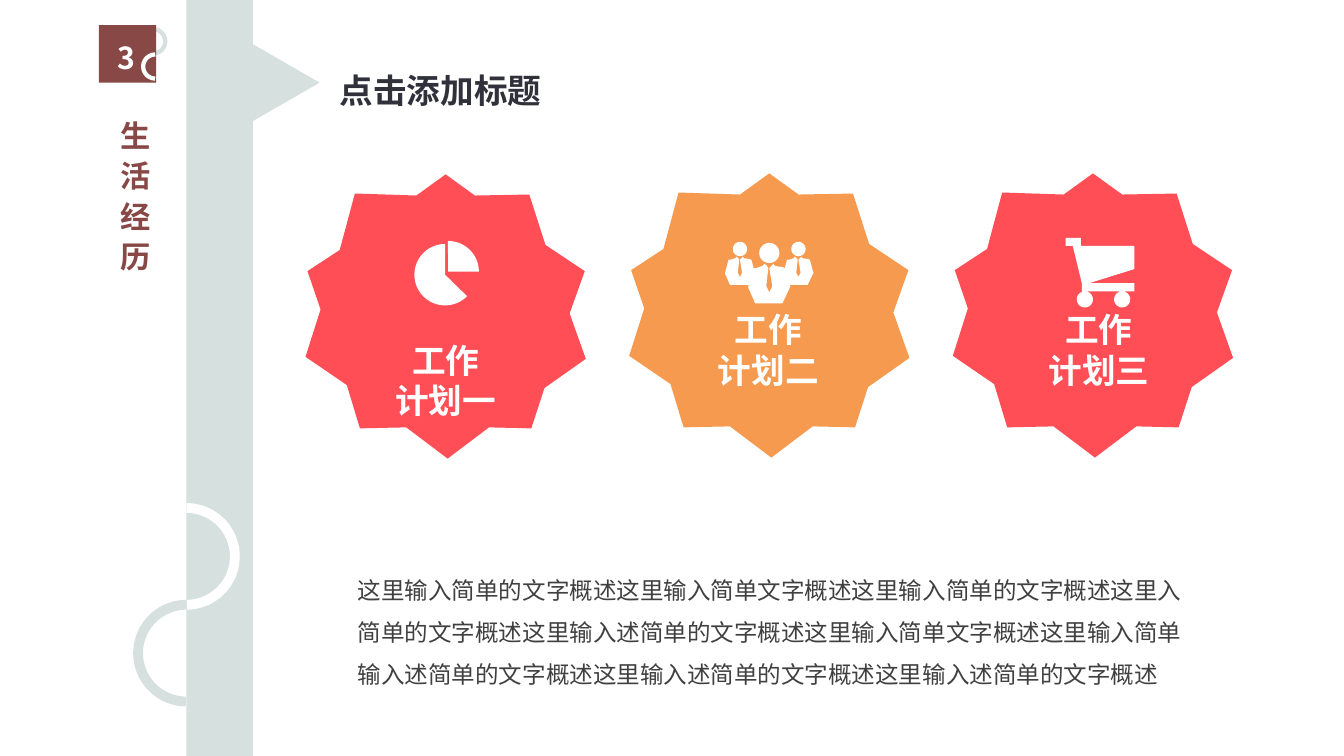
"""Build a slide with three work-plan badges beside a decorated section bar."""
from math import cos, pi, sin

from lxml.etree import SubElement
from pptx import Presentation
from pptx.dml.color import RGBColor
from pptx.enum.shapes import MSO_SHAPE
from pptx.enum.text import MSO_AUTO_SIZE, PP_ALIGN
from pptx.oxml.ns import qn
from pptx.util import Inches, Pt

FONT = "Noto Sans CJK JP"
WHITE = RGBColor(0xFF, 0xFF, 0xFF)
RED = RGBColor(0xFF, 0x4E, 0x56)
ORANGE = RGBColor(0xF6, 0x9A, 0x4F)
MIST = RGBColor(0xD6, 0xE0, 0xDF)
BROWN = RGBColor(0x88, 0x48, 0x46)
INK = RGBColor(0x31, 0x31, 0x3B)
GREY = RGBColor(0x40, 0x40, 0x40)

BADGE_STEP = 3.21
BADGE = [
    (4.42, 1.73), (4.71, 1.94), (5.25, 1.93), (5.41, 2.43), (5.8, 2.69),
    (5.65, 3.11), (5.81, 3.56), (5.4, 3.85), (5.27, 4.25), (4.85, 4.24),
    (4.44, 4.55), (4.03, 4.24), (3.57, 4.25), (3.44, 3.82), (3.03, 3.54),
    (3.18, 3.07), (3.05, 2.69), (3.37, 2.48), (3.52, 1.92), (4.13, 1.94),
]
BADGES = [
    (RED, 0, "计划一", (3.49, 3.32, 1.86, 0.91)),
    (ORANGE, -0.01, "计划二", (6.77, 3.02, 1.7, 0.91)),
    (RED, -0.01, "计划三", (9.97, 3.02, 1.86, 0.91)),
]
PERSON_BODY = [
    (0.16, 0.21), (0.18, 0.22), (0.2, 0.25), (0.18, 0.43), (0.21, 0.49),
    (0.24, 0.43), (0.21, 0.25), (0.24, 0.22), (0.25, 0.21), (0.27, 0.23),
    (0.34, 0.24), (0.37, 0.25), (0.41, 0.4), (0.42, 0.43), (0.34, 0.6),
    (0.07, 0.6), (0, 0.44), (0.05, 0.25), (0.08, 0.25), (0.14, 0.23),
]
CART_BODY = [
    (10.57, 2.36), (10.72, 2.36), (10.72, 2.44), (11.25, 2.44), (11.25, 2.67),
    (10.8, 2.81), (11.25, 2.81), (11.25, 2.89), (10.73, 2.89), (10.73, 2.81),
    (10.64, 2.44), (10.57, 2.44),
]
SUMMARY = (
    "这里输入简单的文字概述这里输入简单文字概述这里输入简单的文字概述这里入"
    "简单的文字概述这里输入述简单的文字概述这里输入简单文字概述这里输入简单"
    "输入述简单的文字概述这里输入述简单的文字概述这里输入述简单的文字概述"
)


def circle(center_x, center_y, radius, steps=36):
    """Return the points of a circular contour."""
    angles = [2 * pi * step / steps for step in range(steps)]
    return [(center_x + radius * cos(angle), center_y + radius * sin(angle)) for angle in angles]


def move(points, left, top, scale=1):
    """Return points scaled and then shifted."""
    return [(left + scale * x, top + scale * y) for x, y in points]


def fill_plain(shape, color):
    """Give a shape a solid fill with no line or shadow."""
    shape.shadow.inherit = False
    shape.fill.solid()
    shape.fill.fore_color.rgb = color
    shape.line.fill.background()


def add_outline(shapes, contours, color):
    """Add one filled freeform made of closed contours."""
    builder = None
    for contour in contours:
        points = [(Inches(x), Inches(y)) for x, y in contour]
        if builder is None:
            builder = shapes.build_freeform(*points[0], scale=1.0)
        else:
            builder.move_to(*points[0])
        builder.add_line_segments(points[1:], close=True)
    fill_plain(builder.convert_to_shape(), color)


def add_solid(shapes, kind, box, color, adjustments=(), rotation=0):
    """Add a filled preset shape."""
    shape = shapes.add_shape(kind, *map(Inches, box))
    for index, value in enumerate(adjustments):
        shape.adjustments[index] = value
    shape.rotation = rotation
    fill_plain(shape, color)


def add_half_ring(shapes, left, top, size, color, width, flipped=False):
    """Add a semicircular arc, open to the left or mirrored."""
    arc = shapes.add_shape(MSO_SHAPE.ARC, Inches(left), Inches(top), Inches(size), Inches(size))
    arc.adjustments[0] = 162
    arc.adjustments[1] = 53.592
    arc.shadow.inherit = False
    arc.fill.background()
    arc.line.color.rgb = color
    arc.line.width = Pt(width)
    if flipped:
        arc._element.spPr.find(qn("a:xfrm")).set("flipH", "1")


def add_text(shapes, box, lines, size, color, bold=True, wrap=True,
             align=None, spacing=None, vertical=False):
    """Add a text box with one paragraph per line."""
    frame = shapes.add_textbox(*map(Inches, box)).text_frame
    frame.word_wrap = wrap
    frame.auto_size = MSO_AUTO_SIZE.SHAPE_TO_FIT_TEXT
    if vertical:
        frame._txBody.bodyPr.set("vert", "eaVert")
    for index, line in enumerate(lines):
        paragraph = frame.add_paragraph() if index else frame.paragraphs[0]
        paragraph.alignment = align
        paragraph.line_spacing = spacing
        run = paragraph.add_run()
        run.text = line
        run.font.size = Pt(size)
        run.font.bold = bold
        run.font.name = FONT
        run.font.color.rgb = color
        properties = run.font._element
        SubElement(properties, qn("a:ea")).set("typeface", FONT)
        if vertical:
            properties.set("spc", "720")


def add_badges(shapes):
    """Add the three star badges with their labels."""
    for index, (color, shift, label, box) in enumerate(BADGES):
        add_outline(shapes, [move(BADGE, index * BADGE_STEP, shift)], color)
        add_text(shapes, box, ["工作", label], 24, WHITE, align=PP_ALIGN.CENTER)


def add_icons(shapes):
    """Add the pie, team and cart icons."""
    pie = shapes.add_group_shape().shapes
    add_solid(pie, MSO_SHAPE.PIE, (4.11, 2.42, 0.61, 0.61), WHITE, (26.688, 162))
    add_solid(pie, MSO_SHAPE.PIE, (4.14, 2.39, 0.61, 0.61), WHITE, (161.684, 216))
    team = shapes.add_group_shape().shapes
    person = [PERSON_BODY, circle(0.21, 0.1, 0.1)]
    for left, top, scale in [(7.42, 2.41, 1), (7.19, 2.4, 0.71), (7.77, 2.4, 0.71)]:
        add_outline(team, [move(part, left, top, scale) for part in person], WHITE)
    wheels = [circle(x, 2.97, 0.08) for x in (10.76, 11.13)]
    add_outline(shapes, [CART_BODY, *wheels], WHITE)


def add_section_bar(shapes):
    """Add the side bar, section number and ring ornaments."""
    add_solid(shapes, MSO_SHAPE.RECTANGLE, (1.85, 0, 0.66, 7.5), MIST)
    add_solid(shapes, MSO_SHAPE.ISOSCELES_TRIANGLE, (2.46, 0.49, 0.76, 0.66), MIST, rotation=90)
    section = shapes.add_group_shape().shapes
    add_half_ring(section, 1.4, 0.29, 0.24, MIST, 3)
    add_solid(section, MSO_SHAPE.RECTANGLE, (0.98, 0.25, 0.57, 0.57), BROWN)
    add_half_ring(section, 1.42, 0.54, 0.24, WHITE, 3, flipped=True)
    add_text(section, (0.99, 1.1, 0.57, 1.72), ["生活经历"], 21.6, BROWN, wrap=False, vertical=True)
    add_text(section, (1.07, 0.34, 0.38, 0.46), ["3"], 21.6, WHITE, wrap=False)
    add_half_ring(shapes, 1.37, 5.04, 0.96, WHITE, 7)
    add_half_ring(shapes, 1.37, 6, 0.96, MIST, 7, flipped=True)


def main():
    """Build and save the presentation."""
    presentation = Presentation()
    presentation.slide_width = Inches(13.33)
    presentation.slide_height = Inches(7.5)
    slide = presentation.slides.add_slide(presentation.slide_layouts[6])
    shapes = slide.shapes
    add_badges(shapes)
    add_icons(shapes)
    add_text(shapes, (3.45, 5.52, 8.51, 1.32), [SUMMARY], 16.8, GREY, bold=False, spacing=1.5)
    add_text(shapes, (3.27, 0.44, 2.24, 0.65), ["点击添加标题"], 24, INK, wrap=False, spacing=1.5)
    add_section_bar(shapes)
    presentation.save("out.pptx")


if __name__ == "__main__":
    main()
